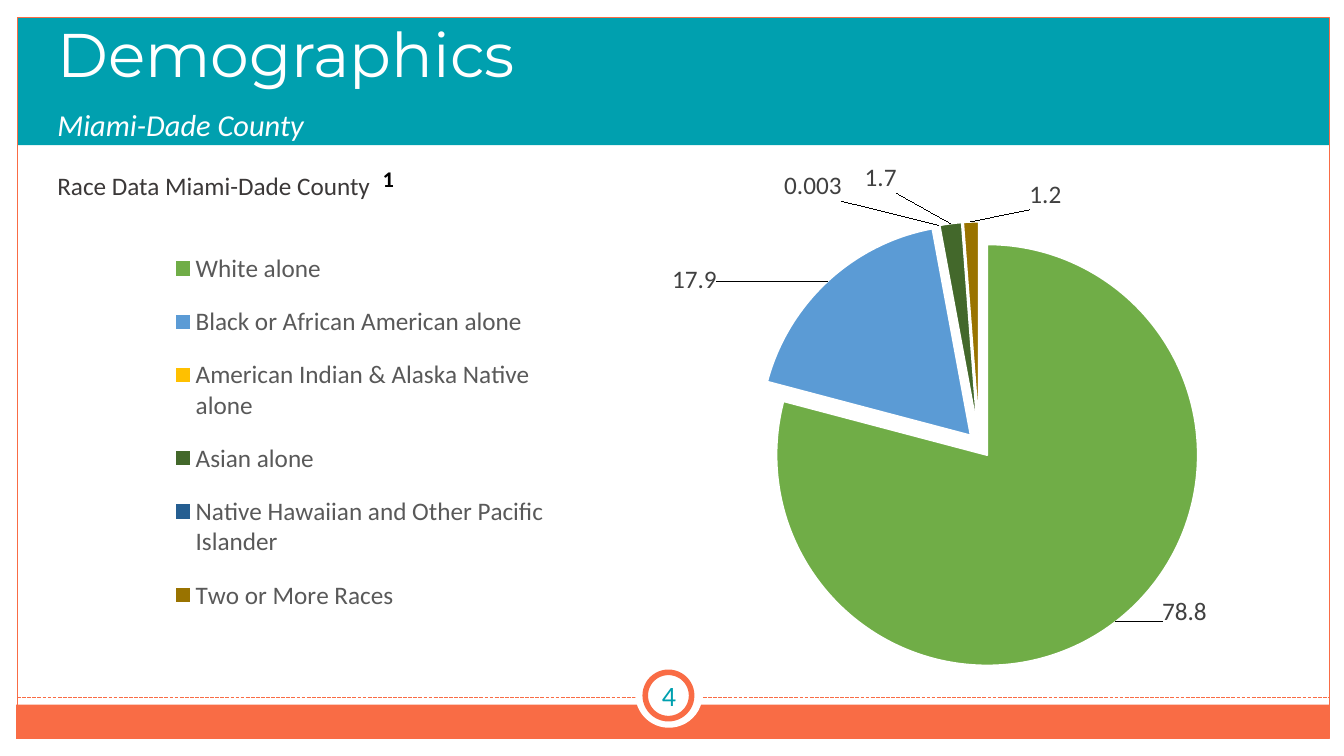
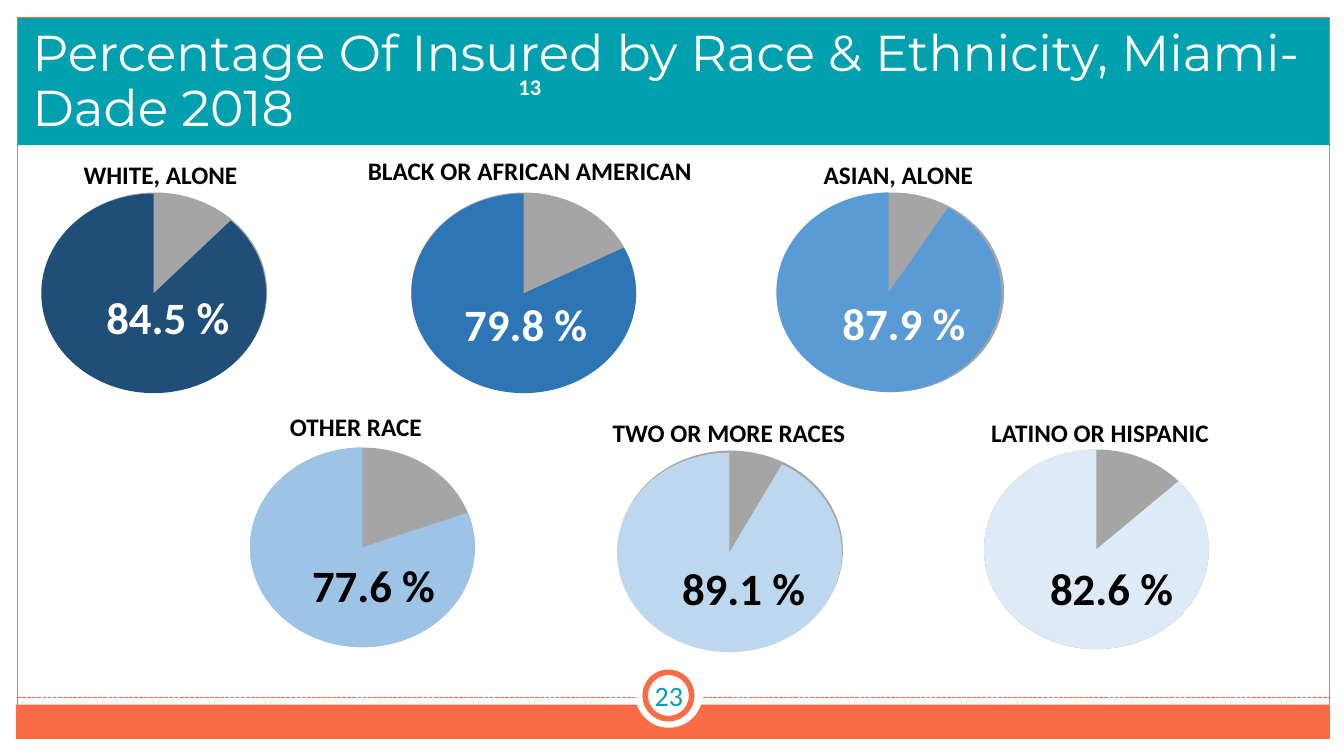
import dataclasses

import lxml.etree
import pptx
import pptx.chart.data
import pptx.dml.color
import pptx.enum.chart
import pptx.enum.dml
import pptx.enum.shapes
import pptx.enum.text
import pptx.oxml.ns
import pptx.util

Inches = pptx.util.Inches
Pt = pptx.util.Pt
Shape = pptx.enum.shapes.MSO_SHAPE
Align = pptx.enum.text.PP_ALIGN
Anchor = pptx.enum.text.MSO_ANCHOR
qn = pptx.oxml.ns.qn


@dataclasses.dataclass(frozen=True)
class Theme:
    teal: str = "00A0AF"
    coral: str = "F96C45"
    white: str = "FFFFFF"
    black: str = "000000"
    ink: str = "3B3838"
    label: str = "404040"
    legend: str = "595959"
    grey: str = "A5A5A5"
    head: str = "Montserrat"
    body: str = "Calibri"
    big: float = 44
    title: float = 36
    value: float = 32
    sub: float = 21.7
    page: float = 20
    text: float = 18
    note: float = 16
    chart: float = 10


THEME = Theme()


def color(code):
    return pptx.dml.color.RGBColor.from_string(code)


def style(font, size, code, face=THEME.body, bold=False, italic=False):
    font.name, font.size = face, Pt(size)
    font.bold, font.italic = bold, italic
    font.color.rgb = color(code)


def write(frame, words, size=THEME.text, code=THEME.black, align=Align.LEFT,
          anchor=Anchor.TOP, space=None, **look):
    """Put one formatted paragraph into a text frame."""
    frame.word_wrap = True
    frame.auto_size = pptx.enum.text.MSO_AUTO_SIZE.NONE
    frame.vertical_anchor = anchor
    para = frame.paragraphs[0]
    para.alignment = align
    if space:
        para.line_spacing = space
    run = para.add_run()
    run.text = words
    style(run.font, size, code, **look)


def arrange(node, spot, inner=False, **sides):
    """Give a chart part a manual layout as its child number spot."""
    for old in node.findall(qn("c:layout")):
        node.remove(old)
    layout = lxml.etree.Element(qn("c:layout"))
    manual = lxml.etree.SubElement(layout, qn("c:manualLayout"))
    parts = {"layoutTarget": "inner"} if inner else {}
    if "w" in sides:
        parts.update(xMode="edge", yMode="edge")
    parts.update(sides)
    for name, value in parts.items():
        lxml.etree.SubElement(manual, qn("c:" + name)).set("val", str(value))
    node.insert(spot, layout)


class Deck:
    """Holds the theme and the slide being built."""

    def __init__(self, theme):
        self.theme = theme
        self.file = pptx.Presentation()
        self.file.slide_width = Inches(13.33)
        self.file.slide_height = Inches(7.5)
        self.slide = None

    def start(self, title, box, size, page):
        """Add a slide with its bands, page badge and title."""
        t = self.theme
        self.slide = self.file.slides.add_slide(self.file.slide_layouts[5])
        self.shape(Shape.RECTANGLE, (0.17, 0.18, 13.02, 1.26), t.teal)
        self.shape(Shape.RECTANGLE, (0.16, 6.99, 13.02, 0.34), t.coral)
        self.shape(Shape.RECTANGLE, (0.17, 0.17, 13.02, 7.16),
                   line=t.coral, width=0.75)
        self.rule(0.17, 13.18, 6.92)
        self.shape(Shape.OVAL, (6.3, 6.55, 0.67, 0.67), t.white)
        self.shape(Shape.OVAL, (6.4, 6.67, 0.46, 0.46), t.white, t.coral, 4)
        self.text(str(page), (6.21, 6.66, 0.85, 0.48), size=t.page,
                  code=t.teal, align=Align.CENTER, anchor=Anchor.MIDDLE)
        # Title goes in front of the band
        head = self.slide.shapes.title
        head.left, head.top, head.width, head.height = map(Inches, box)
        write(head.text_frame, title, size=size, code=t.white, face=t.head,
              space=0.9)
        self.slide.shapes.element.append(head.element)

    def shape(self, kind, box, fill=None, line=None, width=1):
        item = self.slide.shapes.add_shape(kind, *map(Inches, box))
        item.shadow.inherit = False
        if fill:
            item.fill.solid()
            item.fill.fore_color.rgb = color(fill)
        else:
            item.fill.background()
        if line:
            item.line.color.rgb = color(line)
            item.line.width = Pt(width)
        else:
            item.line.fill.background()
        return item

    def rule(self, left, right, y):
        item = self.slide.shapes.add_connector(
            pptx.enum.shapes.MSO_CONNECTOR.STRAIGHT,
            Inches(left), Inches(y), Inches(right), Inches(y))
        item.line.color.rgb = color(self.theme.coral)
        item.line.width = Pt(0.9)
        item.line.dash_style = pptx.enum.dml.MSO_LINE.SQUARE_DOT
        lxml.etree.SubElement(item.element.spPr, qn("a:effectLst"))

    def text(self, words, box, **look):
        item = self.slide.shapes.add_textbox(*map(Inches, box))
        write(item.text_frame, words, **look)

    def gauge(self, disc, wedge, angle, fill):
        """Draw a grey disc under a pie that runs from angle to the top."""
        size = (2.23, 1.98)
        self.shape(Shape.OVAL, disc + size, self.theme.grey)
        pie = self.shape(Shape.PIE, wedge + size, fill)
        # One degree is 60000 units, an adjustment is 100000
        pie.adjustments[0] = angle * 0.6
        pie.adjustments[1] = 270 * 0.6

    def pie(self, box, rows):
        """Add a pie chart from rows of name, value, fill and label shift."""
        t = self.theme
        data = pptx.chart.data.CategoryChartData()
        data.categories = [row[0] for row in rows]
        data.add_series("Series 1", [row[1] for row in rows])
        chart = self.slide.shapes.add_chart(
            pptx.enum.chart.XL_CHART_TYPE.PIE, *map(Inches, box), data).chart
        chart.has_title = False
        style(chart.font, t.chart, t.black)
        plot = chart.plots[0]
        plot.vary_by_categories = True
        arrange(chart.element.xpath("c:chart/c:plotArea")[0], 0, inner=True,
                x=0.567, y=0.155, w=0.419, h=0.733)

        # Legend
        chart.has_legend = True
        chart.legend.position = pptx.enum.chart.XL_LEGEND_POSITION.BOTTOM
        chart.legend.include_in_layout = False
        style(chart.legend.font, t.text, t.legend)
        arrange(chart.element.xpath("c:chart/c:legend")[0], 1,
                x=0.01, y=0.17, w=0.37, h=0.66)

        # Slices and labels
        series = plot.series[0]
        best = pptx.enum.chart.XL_LABEL_POSITION.BEST_FIT
        labels = series.data_labels
        labels.show_value = True
        labels.position = best
        style(labels.font, t.text, t.label)
        for spot, (name, value, fill, shift) in enumerate(rows):
            point = series.points[spot]
            point.format.fill.solid()
            point.format.fill.fore_color.rgb = color(fill)
            point.format.line.color.rgb = color(t.white)
            point.format.line.width = Pt(1.5)
            label = point.data_label
            style(label.font, t.text, t.label)
            label.position = best
            node = chart.element.xpath(f".//c:dLbl[c:idx/@val='{spot}']")[0]
            if shift:
                arrange(node, 1, x=shift[0], y=shift[1])
            else:
                for part in node[1:]:
                    node.remove(part)
                lxml.etree.SubElement(node, qn("c:delete")).set("val", "1")
        burst = lxml.etree.Element(qn("c:explosion"))
        burst.set("val", "6")
        chart.element.xpath(".//c:dPt")[0].addprevious(burst)


RACES = [
    ("White alone", 78.8, "70AD47", (0.04, -0.05)),
    ("Black or African American alone", 17.9, "5B9BD5", (-0.1, 0.03)),
    ("American Indian & Alaska Native alone", 0.003, "FFC000",
     (-0.09, -0.03)),
    ("Asian alone", 1.7, "43682B", (-0.05, -0.04)),
    ("Native Hawaiian and Other Pacific Islander", 0, "255E91", None),
    ("Two or More Races", 1.2, "997300", (0.07, -0.01)),
]

# Name, its box, disc, wedge, angle, fill, percentage, its place, its colour
INSURED = [
    ("WHITE, ALONE", (0.73, 1.53, 1.99), (0.42, 1.91), (0.41, 1.92),
     316.59, "1F4E79", "84.5 %", (0.88, 2.83), THEME.white),
    ("BLACK OR AFRICAN AMERICAN", (3.53, 1.49, 3.45), (4.08, 1.91),
     (4.08, 1.92), 335.5, "2E75B6", "79.8 %", (4.43, 2.89), THEME.white),
    ("ASIAN, ALONE", (7.44, 1.53, 2.94), (7.73, 1.91), (7.7, 1.91),
     305.03, "5B9BD5", "87.9 %", (8.18, 2.88), THEME.white),
    ("OTHER RACE", (2.06, 4.03, 2.94), (2.48, 4.44), (2.48, 4.44),
     341.73, "9DC3E6", "77.6 %", (2.92, 5.48), THEME.black),
    ("TWO OR MORE RACES", (5.76, 4.09, 2.94), (6.13, 4.47), (6.12, 4.49),
     300.81, "BDD7EE", "89.1 %", (6.59, 5.51), THEME.black),
    ("LATINO OR HISPANIC", (9.44, 4.09, 2.94), (9.76, 4.46), (9.76, 4.46),
     320.29, "DEEBF7", "82.6 %", (10.24, 5.51), THEME.black),
]


def main():
    t = THEME
    deck = Deck(t)

    # Demographics
    deck.start("Demographics", (0.47, 0.19, 11.5, 1.45), t.big, 4)
    deck.text("Miami-Dade County", (0.47, 1.1, 10.06, 0.39), size=t.sub,
              code=t.white, italic=True, space=0.7)
    deck.pie((1.5, 1.26, 10.58, 6.05), RACES)
    deck.text("1", (3.5, 1.59, 0.7, 0.37), size=t.note, bold=True,
              align=Align.CENTER)
    deck.text("Race Data Miami-Dade County", (0.47, 1.64, 3.35, 0.4),
              code=t.ink)

    # Insured by race and ethnicity
    deck.start("Percentage Of Insured by Race & Ethnicity, Miami-Dade 2018",
               (0.22, 0.23, 12.92, 1.45), t.title, 23)
    for name, box, disc, wedge, angle, fill, share, place, code in INSURED:
        deck.gauge(disc, wedge, angle, fill)
        deck.text(share, place + (1.57, 0.64), size=t.value, code=code,
                  bold=True, align=Align.CENTER)
        first = name == INSURED[0][0]
        deck.text(name, box + (0.4,), bold=True,
                  align=Align.LEFT if first else Align.CENTER)
    deck.text("13", (4.14, 0.68, 2.23, 0.37), size=t.note, code=t.white,
              bold=True, align=Align.CENTER)

    deck.file.save("out.pptx")


if __name__ == "__main__":
    main()
